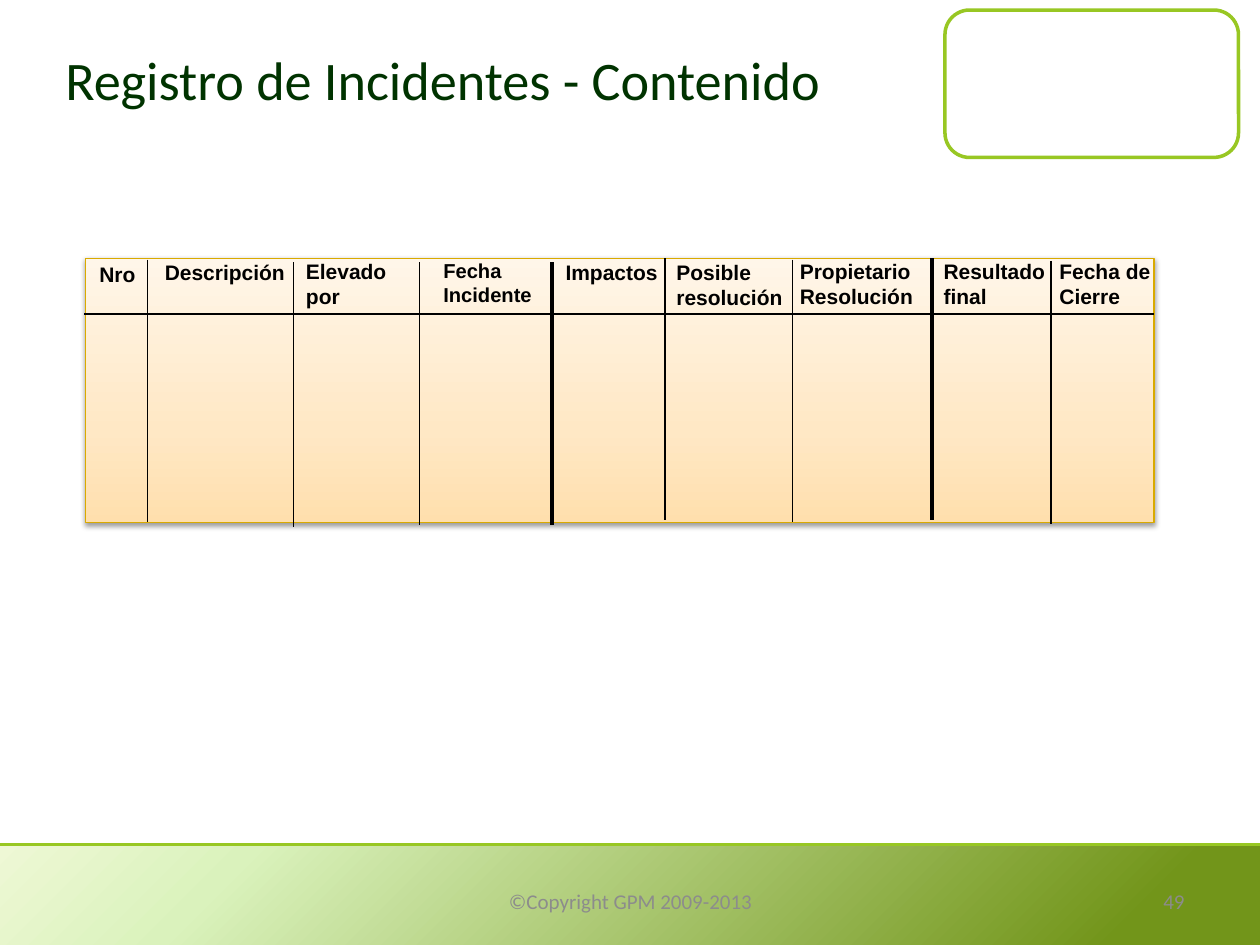
import pptx
import pptx.util
import pptx.dml.color
import pptx.enum.shapes
import pptx.enum.text
import pptx.oxml
import pptx.oxml.ns
from lxml import etree

Inches, Pt = pptx.util.Inches, pptx.util.Pt
RGB = pptx.dml.color.RGBColor.from_string
SHAPE = pptx.enum.shapes.MSO_SHAPE
ANCHOR, ALIGN = pptx.enum.text.MSO_ANCHOR, pptx.enum.text.PP_ALIGN
qn = pptx.oxml.ns.qn

THEME = {
    "white": "FFFFFF", "green": "98C723", "gold": "D9AA00", "black": "000000",
    "footer_stops": [(0, "EEF8D5"), (19, "DAF2BC"), (89, "72951A")],
    "panel_stops": [(0, "FFDFAD"), (35, "FFE8C5"), (100, "FFF6E9")],
    "title": {"size": Pt(31), "name": "Calibri", "color": "003300"},
    "header": {"size": Pt(12), "name": "Arial", "bold": True, "color": "000000"},
    "footer": {"size": Pt(12), "name": "Calibri", "color": "8C8C8C"},
}

prs = pptx.Presentation()
prs.slide_width, prs.slide_height = Inches(10), Inches(7.5)
s = prs.slides.add_slide(prs.slide_layouts[6])


def add_text(text, box, fmt, wrap=True, anchor=ANCHOR.TOP, align=ALIGN.LEFT):
    tf = s.shapes.add_textbox(*map(Inches, box)).text_frame
    tf.word_wrap, tf.vertical_anchor = wrap, anchor
    p = tf.paragraphs[0]
    p.alignment = align
    r = p.add_run()
    r.text = text
    for key, value in fmt.items():
        if key == "color":
            r.font.color.rgb = RGB(value)
        else:
            setattr(r.font, key, value)


def add_line(x1, y1, x2, y2, color, width):
    ln = s.shapes.add_connector(pptx.enum.shapes.MSO_CONNECTOR.STRAIGHT,
                                *map(Inches, (x1, y1, x2, y2)))
    ln.line.color.rgb, ln.line.width = RGB(color), Pt(width)
    etree.SubElement(ln._element.spPr, qn("a:effectLst"))


# Logo frame, footer band and table panel: shape, box, fill, angle, line
panels = {}
for name, shape, box, fill, angle, line in [
    ("frame", SHAPE.ROUNDED_RECTANGLE, (7.5, 0.08, 2.33, 1.17),
     THEME["white"], None, (THEME["green"], 2)),
    ("footer", SHAPE.RECTANGLE, (0, 6.7, 10, 0.8),
     THEME["footer_stops"], 45, None),
    ("table", SHAPE.RECTANGLE, (0.68, 2.05, 8.48, 2.1),
     THEME["panel_stops"], 270, (THEME["gold"], 0.75)),
]:
    sp = panels[name] = s.shapes.add_shape(shape, *map(Inches, box))
    sp.shadow.inherit = False
    if angle is None:
        sp.fill.solid()
        sp.fill.fore_color.rgb = RGB(fill)
    else:
        sp.fill.gradient()
        grad = sp._element.spPr.find(qn("a:gradFill"))
        stops = grad.find(qn("a:gsLst"))
        for stop in list(stops):
            stops.remove(stop)
        for pos, color in fill:
            stop = etree.SubElement(stops, qn("a:gs"), pos=str(pos * 1000))
            etree.SubElement(stop, qn("a:srgbClr"), val=color)
        lin = grad.find(qn("a:lin"))
        lin.set("ang", str(angle * 60000))
        lin.set("scaled", "0")
    if line:
        sp.line.color.rgb, sp.line.width = RGB(line[0]), Pt(line[1])
    else:
        sp.line.fill.background()

# Soft shadow under the table panel
effects = panels["table"]._element.spPr.find(qn("a:effectLst"))
shadow = etree.SubElement(effects, qn("a:outerShdw"), blurRad=str(Pt(3.1)),
                          dist=str(Pt(1.6)), dir="5400000", rotWithShape="0")
color = etree.SubElement(shadow, qn("a:srgbClr"), val=THEME["black"])
etree.SubElement(color, qn("a:alpha"), val="38000")

# Title and footer
add_line(0, 6.7, 10, 6.7, THEME["green"], 1.5)
add_text("Registro de Incidentes - Contenido", (0.42, 0, 6.75, 1.25),
         THEME["title"], anchor=ANCHOR.MIDDLE)
add_text("©Copyright GPM 2009-2013", (3.42, 6.95, 3.17, 0.4),
         THEME["footer"], anchor=ANCHOR.MIDDLE, align=ALIGN.CENTER)
add_text("49", (7.17, 6.95, 2.33, 0.4),
         THEME["footer"], anchor=ANCHOR.MIDDLE, align=ALIGN.RIGHT)

# Column dividers (x, top, bottom, width) and the rule under the headers
for x, top, bottom, width in [
    (1.17, 2.06, 4.14, 1), (2.33, 2.08, 4.18, 1), (3.33, 2.08, 4.17, 1),
    (4.38, 2.08, 4.17, 2.25), (5.28, 2.05, 4.13, 1), (6.29, 2.06, 4.14, 1),
    (7.4, 2.05, 4.13, 2.25), (8.34, 2.07, 4.16, 1),
]:
    add_line(x, top, x, bottom, THEME["black"], width)
add_line(0.67, 2.49, 9.16, 2.49, THEME["black"], 1)

# Column headers: text, left, top, width, size
for text, x, y, w, size in [
    ("Nro", 0.69, 2.03, 0.52, 12),
    ("Descripción", 1.21, 2.01, 1.23, 12),
    ("Elevado por", 2.33, 2, 0.98, 12),
    ("Fecha Incidente", 3.42, 2, 1.06, 11.5),
    ("Impactos", 4.39, 2.01, 1, 12),
    ("Posible resolución", 5.27, 2.01, 1.11, 12),
    ("Propietario Resolución", 6.25, 2, 1.14, 12),
    ("Resultado final", 7.39, 2, 1.02, 12),
    ("Fecha de Cierre", 8.31, 2, 0.94, 12),
]:
    two_lines = " " in text
    add_text(text, (x, y, w, 0.5 if two_lines else 0.3),
             {**THEME["header"], "size": Pt(size)}, wrap=two_lines)

prs.save("out.pptx")
